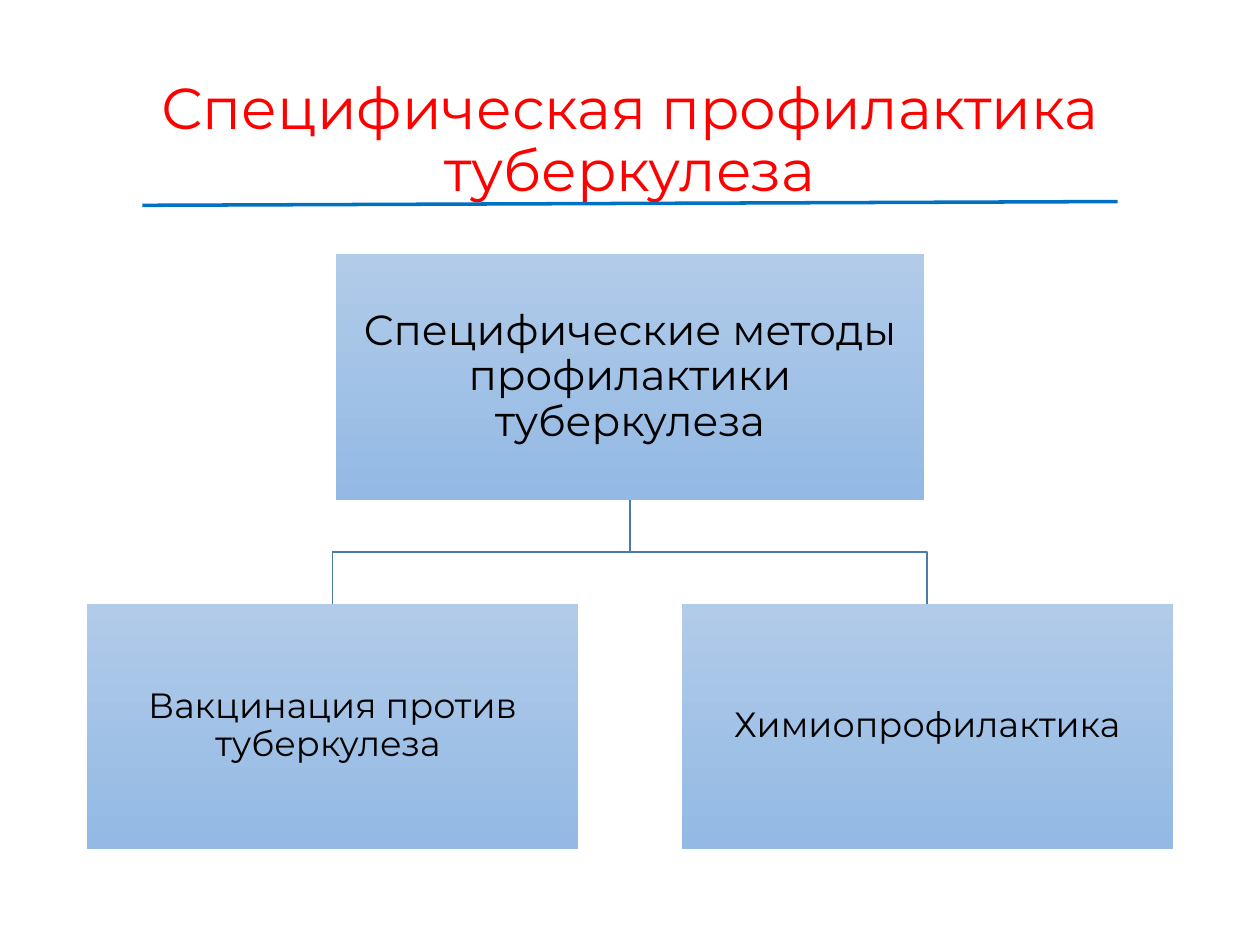
import pptx
import pptx.util
import pptx.dml.color
import pptx.enum.shapes
import pptx.enum.text
import pptx.oxml.ns
import lxml.etree

Pt = pptx.util.Pt
COLORS = {"title": "FF0000", "text": "000000", "rule": "0070C0",
          "link": "497CAB", "top": "B1CBE9", "base": "93B9E4"}


class Deck:
    font = "Montserrat"

    def __init__(self, wide, high):
        self.prs = pptx.Presentation()
        self.prs.slide_width = pptx.util.Inches(wide)
        self.prs.slide_height = pptx.util.Inches(high)
        self.slide = self.prs.slides.add_slide(self.prs.slide_layouts[5])
        self.shapes = self.slide.shapes

    def x(self, share):
        return round(self.prs.slide_width * share / 100)

    def y(self, share):
        return round(self.prs.slide_height * share / 100)

    def color(self, name):
        return pptx.dml.color.RGBColor.from_string(COLORS[name])

    def label(self, shape, text, size, name, inset=None):
        frame = shape.text_frame
        frame.text = text
        frame.word_wrap = True
        frame.auto_size = pptx.enum.text.MSO_AUTO_SIZE.NONE
        frame.vertical_anchor = pptx.enum.text.MSO_ANCHOR.MIDDLE
        if inset is not None:
            frame.margin_left = frame.margin_right = Pt(inset)
            frame.margin_top = frame.margin_bottom = Pt(inset)
        para = frame.paragraphs[0]
        para.alignment = pptx.enum.text.PP_ALIGN.CENTER
        para.line_spacing = 0.9
        para.font.name = self.font
        para.font.size = Pt(size)
        para.font.color.rgb = self.color(name)

    def title(self, text, left, top, width, height):
        shape = self.shapes.title
        shape.left, shape.top = self.x(left), self.y(top)
        shape.width, shape.height = self.x(width), self.y(height)
        self.label(shape, text, 33, "title")

    def box(self, text, size, mid, top, width, height):
        shape = self.shapes.add_shape(
            pptx.enum.shapes.MSO_SHAPE.RECTANGLE, self.x(mid - width / 2),
            self.y(top), self.x(width), self.y(height))
        shape.shadow.inherit = False
        shape.line.fill.background()
        shape.fill.gradient()
        shape.fill.gradient_angle = 270
        for stop, name in zip(shape.fill.gradient_stops, ("top", "base")):
            stop.color.rgb = self.color(name)
            stop.position = 0 if name == "top" else 1
        self.label(shape, text, size, "text", 1)

    def branch(self, start, end, top, base):
        half = self.y((top + base) / 2)
        route = self.shapes.build_freeform(self.x(start), self.y(top))
        route.add_line_segments(
            [(self.x(start), half), (self.x(end), half),
             (self.x(end), self.y(base))], close=False)
        shape = route.convert_to_shape()
        shape.shadow.inherit = False
        shape.fill.background()
        shape.line.color.rgb = self.color("link")
        shape.line.width = Pt(1)

    def rule(self, left, top, right, base):
        line = self.shapes.add_connector(
            pptx.enum.shapes.MSO_CONNECTOR.STRAIGHT,
            self.x(left), self.y(top), self.x(right), self.y(base))
        line.line.color.rgb = self.color("rule")
        line.line.width = Pt(2)
        lxml.etree.SubElement(line._element.spPr,
                              pptx.oxml.ns.qn("a:effectLst"))


def main():
    deck = Deck(10, 7.5)
    center, offset = 50, 23.6
    root, leaf, height = 26.93, 63.87, 26
    leaves = {center - offset: "Вакцинация против туберкулеза ",
              center + offset: "Химиопрофилактика"}

    deck.title("Специфическая профилактика туберкулеза",
               6.9, 5.33, 86.2, 19.33)
    for mid in leaves:
        deck.branch(center, mid, root + height, leaf)
    deck.box("Специфические методы профилактики туберкулеза",
             24, center, root, 46.7, height)
    for mid, text in leaves.items():
        deck.box(text, 20, mid, leaf, 39, height)
    deck.rule(11.3, 21.73, 88.7, 21.33)
    deck.prs.save("out.pptx")


if __name__ == "__main__":
    main()
